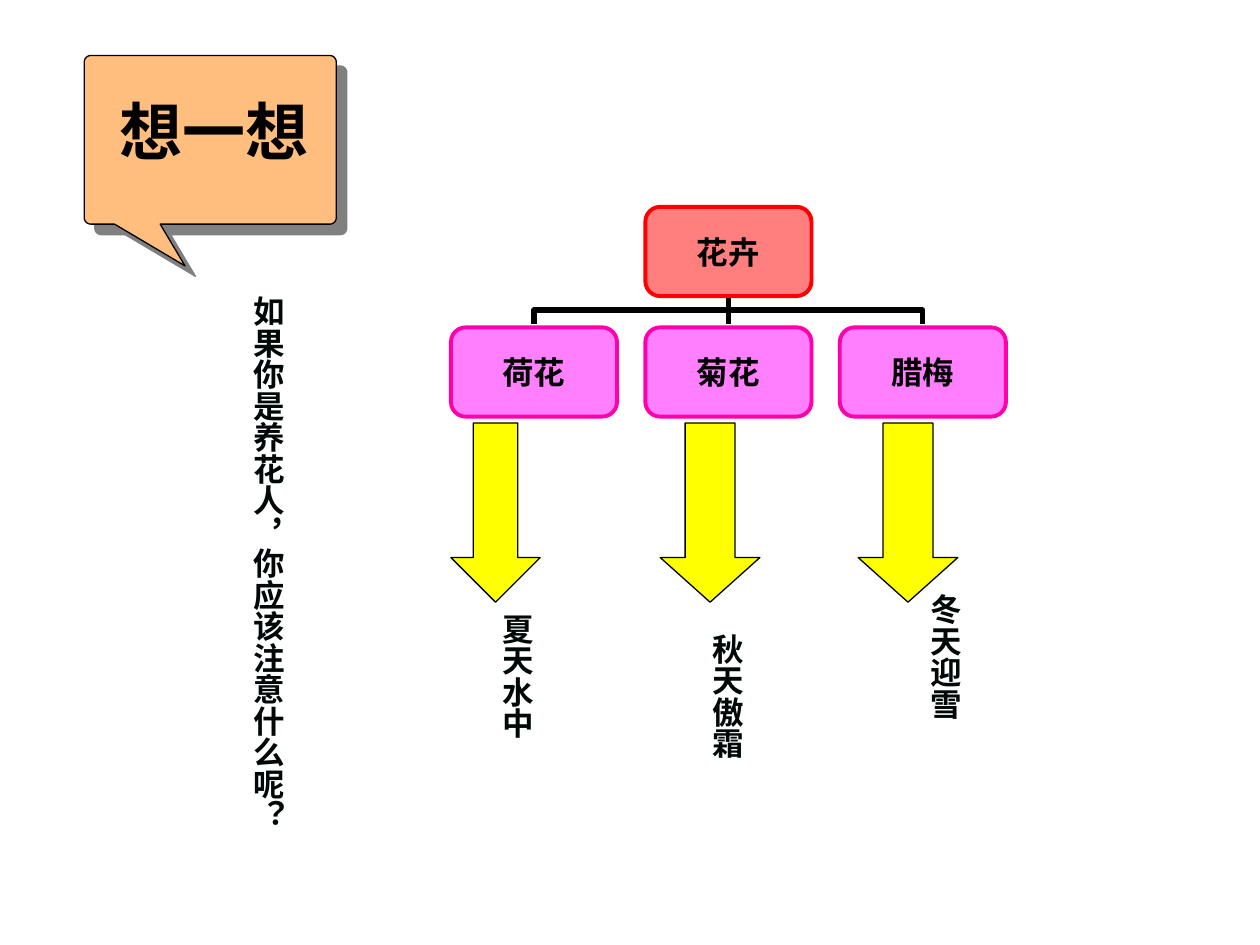
import math
from typing import NamedTuple

import pptx
import pptx.dml.color
import pptx.enum.shapes
import pptx.enum.text
import pptx.oxml
import pptx.oxml.ns
import pptx.util
from pptx.util import Cm, Pt

SHAPE = pptx.enum.shapes.MSO_SHAPE
CONNECTOR = pptx.enum.shapes.MSO_CONNECTOR
ALIGN = pptx.enum.text.PP_ALIGN
MIDDLE = pptx.enum.text.MSO_ANCHOR.MIDDLE
A_NS = pptx.oxml.ns.nsdecls("a")

NODE_W, NODE_H = 3.35, 1.80
NODE_LEFT, NODE_PITCH = 9.09, 3.92
ROOT_TOP, CHILD_TOP = 4.17, 6.60
BRANCH_BOTTOM = 6.53
ARROW_TOP, ARROW_H, ARROW_HEAD = 8.53, 3.61, 0.90


class Box(NamedTuple):
    left: float
    top: float
    width: float
    height: float

    def emu(self) -> list:
        return [Cm(v) for v in self]


class Flower(NamedTuple):
    name: str
    arrow_left: float
    arrow_width: float
    caption: str
    caption_box: Box


FLOWERS = [
    Flower("荷花", 9.09, 1.80, "夏天水中", Box(9.09, 12.12, 1.85, 6.20)),
    Flower("菊花", 13.31, 2.01, "秋天傲霜", Box(13.31, 12.52, 1.85, 5.41)),
    Flower("腊梅", 17.30, 2.01, "冬天迎雪", Box(17.70, 11.73, 1.85, 7.32)),
]


def rgb(color: str):
    return pptx.dml.color.RGBColor.from_string(color)


def paint(sp, fill: str, line: str, width: float) -> None:
    sp.shadow.inherit = False
    sp.fill.solid()
    sp.fill.fore_color.rgb = rgb(fill)
    sp.line.color.rgb = rgb(line)
    sp.line.width = Pt(width)


def write(sp, text: str, size: float, color: str, align) -> None:
    p = sp.text_frame.paragraphs[0]
    p.text = text
    p.alignment = align
    p.font.name = "Arial"
    p.font.size = Pt(size)
    p.font.bold = True
    p.font.color.rgb = rgb(color)


def add_node(s, text: str, column: int, top: float, fill: str, line: str):
    box = Box(NODE_LEFT + column * NODE_PITCH, top, NODE_W, NODE_H)
    sp = s.shapes.add_shape(SHAPE.ROUNDED_RECTANGLE, *box.emu())
    paint(sp, fill, line, 2.25)
    color = sp.fill._xPr.find(".//" + pptx.oxml.ns.qn("a:srgbClr"))
    color.append(pptx.oxml.parse_xml(f'<a:alpha {A_NS} val="50000"/>'))
    tf = sp.text_frame
    tf.word_wrap = False
    tf.vertical_anchor = MIDDLE
    write(sp, text, 18, "000000", ALIGN.CENTER)
    return sp


def add_line(s, kind, x1: float, y1: float, x2: float, y2: float):
    line = s.shapes.add_connector(kind, Cm(x1), Cm(y1), Cm(x2), Cm(y2))
    line.line.color.rgb = rgb("000000")
    line.line.width = Pt(3)
    line.element.spPr.append(pptx.oxml.parse_xml(f"<a:effectLst {A_NS}/>"))
    return line


def add_branch(s, child_x: float, root_x: float, root_bottom: float) -> None:
    """Elbow from a side child up to the root, turned so that it leaves vertically."""
    cx, cy = (child_x + root_x) / 2, (BRANCH_BOTTOM + root_bottom) / 2
    half_w, half_h = (BRANCH_BOTTOM - root_bottom) / 2, abs(child_x - root_x) / 2
    side = 1 if child_x > root_x else -1
    line = add_line(s, CONNECTOR.ELBOW, cx + side * half_w, cy - half_h,
                    cx - side * half_w, cy + half_h)
    line.element.spPr.xfrm.set("rot", str((90 if side > 0 else 270) * 60000))


def add_vertical_text(s, text: str, box: Box) -> None:
    sp = s.shapes.add_textbox(*box.emu())
    sp.text_frame.word_wrap = True
    sp.text_frame._txBody.bodyPr.set("vert", "eaVert")
    write(sp, text, 18, "000808", ALIGN.LEFT)


def add_callout(s, box: Box, radius: float):
    """Speech bubble with rounded corners, a narrow tail and a hard shadow."""
    right, bottom = box.left + box.width, box.top + box.height

    def corner(cx: float, cy: float, start: int) -> list:
        angles = [math.radians(start + step) for step in range(0, 91, 15)]
        return [(cx + radius * math.cos(a), cy + radius * math.sin(a)) for a in angles]

    tail = [(3.23, bottom), (3.73, 5.36), (2.31, bottom)]
    points = (corner(box.left + radius, box.top + radius, 180)
              + corner(right - radius, box.top + radius, 270)
              + corner(right - radius, bottom - radius, 0)
              + tail
              + corner(box.left + radius, bottom - radius, 90))
    points = [(Cm(x), Cm(y)) for x, y in points]
    builder = s.shapes.build_freeform(*points[0])
    builder.add_line_segments(points[1:], close=True)
    sp = builder.convert_to_shape()
    paint(sp, "FFBE7D", "000000", 0.75)
    effects = sp.element.spPr.find(pptx.oxml.ns.qn("a:effectLst"))
    effects.append(pptx.oxml.parse_xml(
        f'<a:outerShdw {A_NS} dist="{Pt(8.5)}" dir="2700000" algn="ctr" rotWithShape="0">'
        '<a:srgbClr val="808080"/></a:outerShdw>'))
    return sp


def add_title(s, callout, text: str, box: Box) -> None:
    title = s.shapes.title
    title.left, title.top, title.width, title.height = box.emu()
    tf = title.text_frame
    tf.word_wrap = True
    tf.auto_size = pptx.enum.text.MSO_AUTO_SIZE.NONE
    tf.vertical_anchor = MIDDLE
    write(title, text, 36, "000000", ALIGN.CENTER)
    callout.element.addnext(title.element)


def add_tree(s) -> None:
    root_bottom = ROOT_TOP + NODE_H
    centers = [NODE_LEFT + i * NODE_PITCH + NODE_W / 2 for i in range(len(FLOWERS))]
    left_x, root_x, right_x = centers
    add_branch(s, right_x, root_x, root_bottom)
    trunk = add_line(s, CONNECTOR.STRAIGHT, root_x, BRANCH_BOTTOM, root_x, root_bottom)
    add_branch(s, left_x, root_x, root_bottom)
    root = add_node(s, "花卉", 1, ROOT_TOP, "FF0000", "FF0000")
    trunk.end_connect(root, 2)
    for column, flower in enumerate(FLOWERS):
        add_node(s, flower.name, column, CHILD_TOP, "FF00FF", "FF00AD")


def add_arrow(s, flower: Flower) -> None:
    box = Box(flower.arrow_left, ARROW_TOP, flower.arrow_width, ARROW_H)
    sp = s.shapes.add_shape(SHAPE.DOWN_ARROW, *box.emu())
    sp.adjustments[1] = ARROW_HEAD / flower.arrow_width
    paint(sp, "FFFF00", "000000", 0.75)


def main() -> None:
    prs = pptx.Presentation()
    prs.slide_width, prs.slide_height = Cm(25.4), Cm(19.05)
    s = prs.slides.add_slide(prs.slide_layouts[5])
    add_tree(s)
    callout = add_callout(s, Box(1.70, 1.12, 5.08, 3.40), 0.13)
    add_title(s, callout, "想一想", Box(2.11, 1.73, 4.39, 1.78))
    add_vertical_text(s, "如果你是养花人，你应该注意什么呢？", Box(2.69, 5.72, 3.23, 11.40))
    for flower in FLOWERS:
        add_arrow(s, flower)
    for flower in FLOWERS:
        add_vertical_text(s, flower.caption, flower.caption_box)
    prs.save("out.pptx")


if __name__ == "__main__":
    main()
